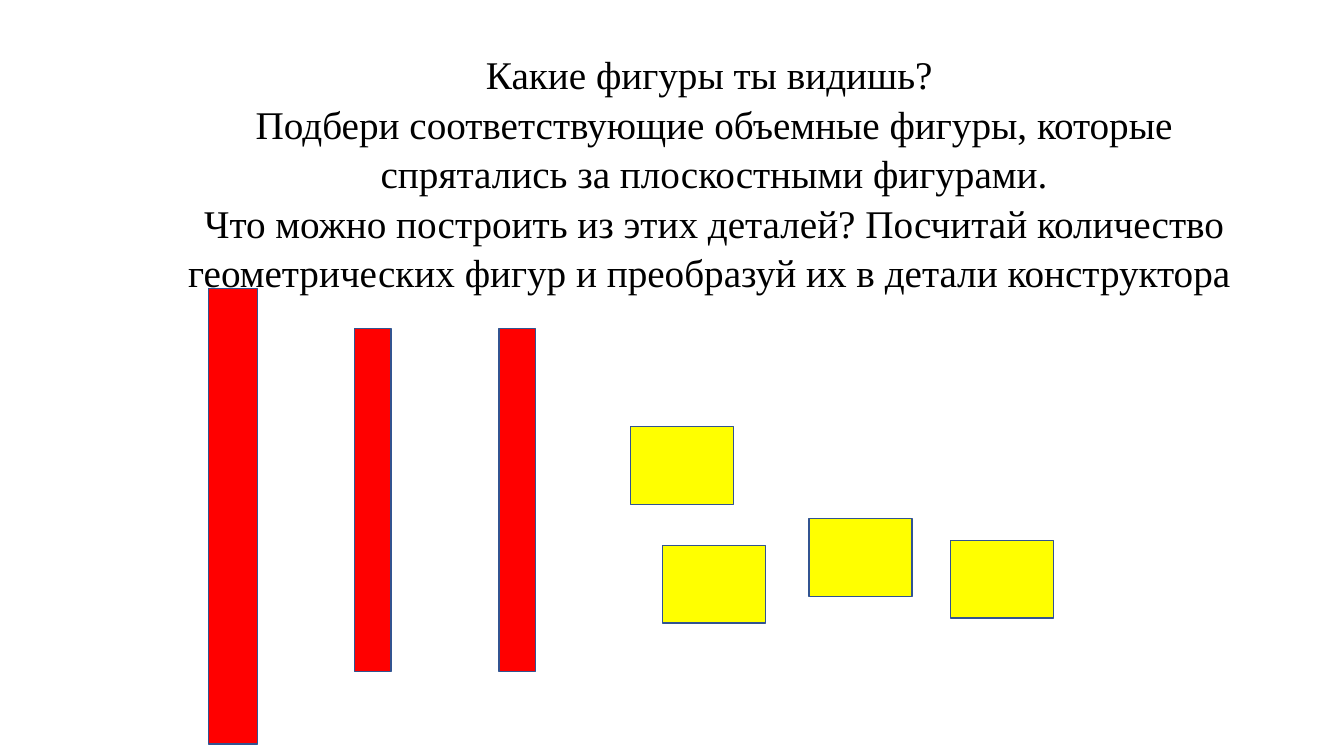
from dataclasses import dataclass

from pptx import Presentation
from pptx import util as u
from pptx.dml.color import RGBColor
from pptx.enum import shapes, text


@dataclass(frozen=True)
class Theme:
    font: str = "Times New Roman"
    text_size: float = 28
    line_spacing: float = 1.05
    outline_width: float = 1
    ink: str = "000000"
    bar: str = "FF0000"
    block: str = "FFFF00"
    outline: str = "325491"


def apply(target, formats):
    for name, value in formats.items():
        setattr(target, name, value)


class SlideBuilder:
    def __init__(self, slide, theme):
        self.slide = slide
        self.theme = theme

    def rectangle(self, left, top, width, height, color, rotation=0):
        shape = self.slide.shapes.add_shape(
            shapes.MSO_SHAPE.RECTANGLE,
            *(u.Pt(length) for length in (left, top, width, height)))
        shape.shadow.inherit = False
        shape.rotation = rotation
        shape.fill.solid()
        shape.fill.fore_color.rgb = RGBColor.from_string(color)
        shape.line.color.rgb = RGBColor.from_string(self.theme.outline)
        shape.line.width = u.Pt(self.theme.outline_width)

    def task(self, left, top, width, height, lines):
        box = self.slide.shapes.add_textbox(
            *(u.Pt(length) for length in (left, top, width, height)))
        frame = box.text_frame
        apply(frame, {"word_wrap": True,
                      "auto_size": text.MSO_AUTO_SIZE.SHAPE_TO_FIT_TEXT})
        for index, line in enumerate(lines):
            paragraph = frame.add_paragraph() if index else frame.paragraphs[0]
            apply(paragraph, {"alignment": text.PP_ALIGN.CENTER,
                              "line_spacing": self.theme.line_spacing})
            run = paragraph.add_run()
            run.text = line
            apply(run.font, {"name": self.theme.font,
                             "size": u.Pt(self.theme.text_size)})
            run.font.color.rgb = RGBColor.from_string(self.theme.ink)


TASK_LINES = (
    "Какие фигуры ты видишь? ",
    "Подбери соответствующие объемные фигуры, которые спрятались "
    "за плоскостными фигурами.",
    "Что можно построить из этих деталей? Посчитай количество "
    "геометрических фигур и преобразуй их в детали конструктора ",
)
BLOCK_SIZE = (73.6, 55.6)
BLOCK_CORNERS = ((450.6, 304.6), (578, 370.5), (679, 386), (473.2, 389.5))
# Left, top, length, thickness and turn of each upright bar
BARS = (
    (3.6, 351.4, 325.6, 34.8, 90),
    (247, 344.2, 244.8, 26, 90),
    (143.8, 344.2, 244.8, 26, 270),
)


def main():
    presentation = Presentation()
    apply(presentation, {"slide_width": u.Pt(960), "slide_height": u.Pt(540)})
    slide = presentation.slides.add_slide(presentation.slide_layouts[6])
    theme = Theme()
    builder = SlideBuilder(slide, theme)

    # Yellow blocks
    for left, top in BLOCK_CORNERS:
        builder.rectangle(left, top, *BLOCK_SIZE, theme.block)

    # Red bars
    for left, top, length, thickness, turn in BARS:
        builder.rectangle(left, top, length, thickness, theme.bar, turn)

    # Task wording
    builder.task(122.4, 31, 775.4, 177.1, TASK_LINES)

    presentation.save("out.pptx")


if __name__ == "__main__":
    main()
